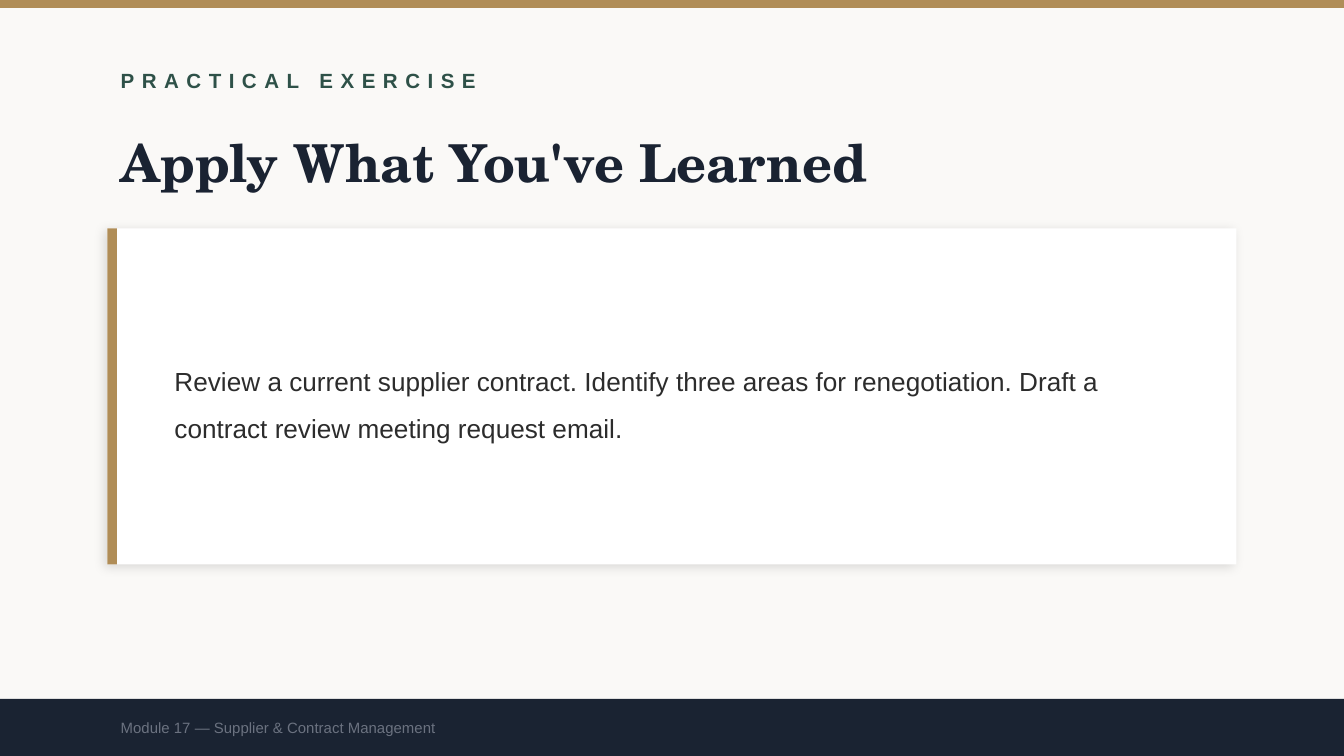
from lxml.etree import SubElement
from pptx import Presentation
from pptx.dml.color import RGBColor
from pptx.enum.shapes import MSO_SHAPE as Shape
from pptx.enum.text import MSO_ANCHOR as Anchor
from pptx.oxml.ns import qn
from pptx.util import Inches, Pt

WIDTH = 10
HEIGHT = WIDTH * 9 / 16
MARGIN = 0.8
FOOTER_TOP = 5.2
CARD_TOP, CARD_HEIGHT = 1.7, 2.5
GOLD, NAVY, GREEN = "B08D57", "1A2332", "2E5148"


def set_fill(fill, color):
    fill.solid()
    fill.fore_color.rgb = RGBColor.from_string(color)


def add_box(slide, left, top, width, height, color):
    shape = slide.shapes.add_shape(
        Shape.RECTANGLE, Inches(left), Inches(top), Inches(width), Inches(height)
    )
    shape.shadow.inherit = False
    set_fill(shape.fill, color)
    shape.line.fill.background()
    return shape


def add_shadow(shape, color, opacity, blur, distance, angle):
    effects = shape._element.spPr.find(qn("a:effectLst"))
    shadow = SubElement(
        effects, qn("a:outerShdw"), blurRad=str(Pt(blur)), dist=str(Pt(distance)),
        dir=str(angle * 60000), algn="bl", rotWithShape="0",
    )
    shade = SubElement(shadow, qn("a:srgbClr"), val=color)
    SubElement(shade, qn("a:alpha"), val=str(opacity * 1000))


def add_text(slide, text, left, top, width, height, size, color,
             name="Arial", bold=False, line_spacing=None, tracking=0):
    box = slide.shapes.add_textbox(
        Inches(left), Inches(top), Inches(width), Inches(height)
    )
    frame = box.text_frame
    frame.word_wrap = True
    frame.vertical_anchor = Anchor.MIDDLE
    paragraph = frame.paragraphs[0]
    paragraph.text = text
    paragraph.line_spacing = line_spacing
    font = paragraph.font
    font.name, font.size, font.bold = name, Pt(size), bold
    font.color.rgb = RGBColor.from_string(color)
    if tracking:
        paragraph.runs[0]._r.get_or_add_rPr().set("spc", str(tracking * 100))


def add_header(slide):
    add_box(slide, 0, 0, WIDTH, 0.06, GOLD)
    add_text(slide, "PRACTICAL EXERCISE", MARGIN, 0.4, 8, 0.4, 11, GREEN,
             bold=True, tracking=4)
    add_text(slide, "Apply What You've Learned", MARGIN, 0.9, 8, 0.6, 28, NAVY,
             name="TeX Gyre Schola", bold=True)


def add_card(slide, text):
    card = add_box(slide, MARGIN, CARD_TOP, WIDTH - 2 * MARGIN, CARD_HEIGHT, "FFFFFF")
    add_shadow(card, "000000", opacity=12, blur=6, distance=2, angle=135)
    add_box(slide, MARGIN, CARD_TOP, 0.07, CARD_HEIGHT, GOLD)
    add_text(slide, text, MARGIN + 0.4, CARD_TOP + 0.2, 7.7, CARD_HEIGHT - 0.4,
             14, "2C2C2C", line_spacing=1.5)


def add_footer(slide, text):
    height = HEIGHT - FOOTER_TOP
    add_box(slide, 0, FOOTER_TOP, WIDTH, height, NAVY)
    add_text(slide, text, MARGIN, FOOTER_TOP, 8, height, 8, "6B7280")


def main():
    presentation = Presentation()
    presentation.slide_width = Inches(WIDTH)
    presentation.slide_height = Inches(HEIGHT)
    slide = presentation.slides.add_slide(presentation.slide_layouts[6])
    set_fill(slide.background.fill, "FAF9F7")
    add_header(slide)
    add_card(slide, "Review a current supplier contract. Identify three areas for "
                    "renegotiation. Draft a contract review meeting request email.")
    add_footer(slide, "Module 17 — Supplier & Contract Management")
    presentation.save("out.pptx")


if __name__ == "__main__":
    main()
